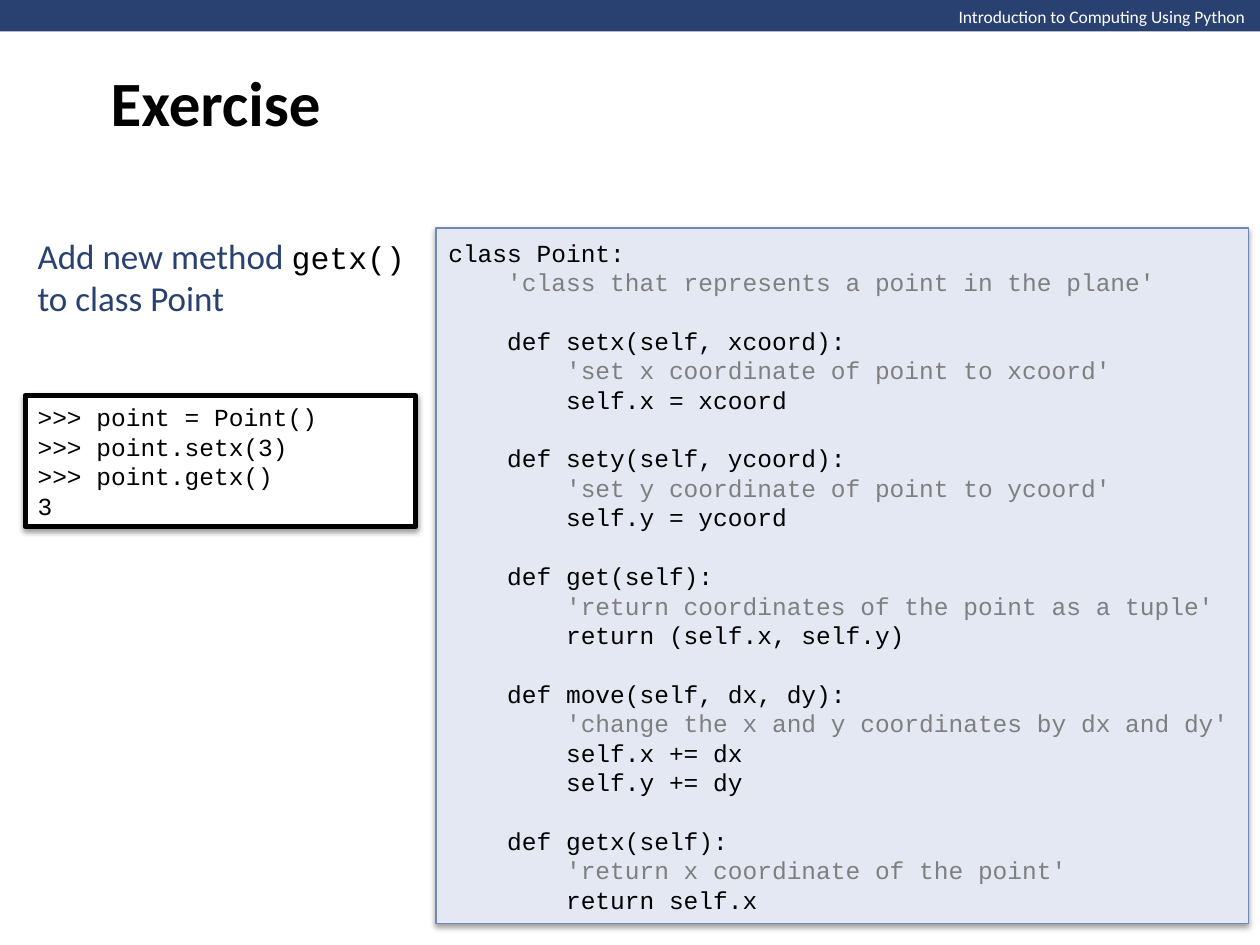
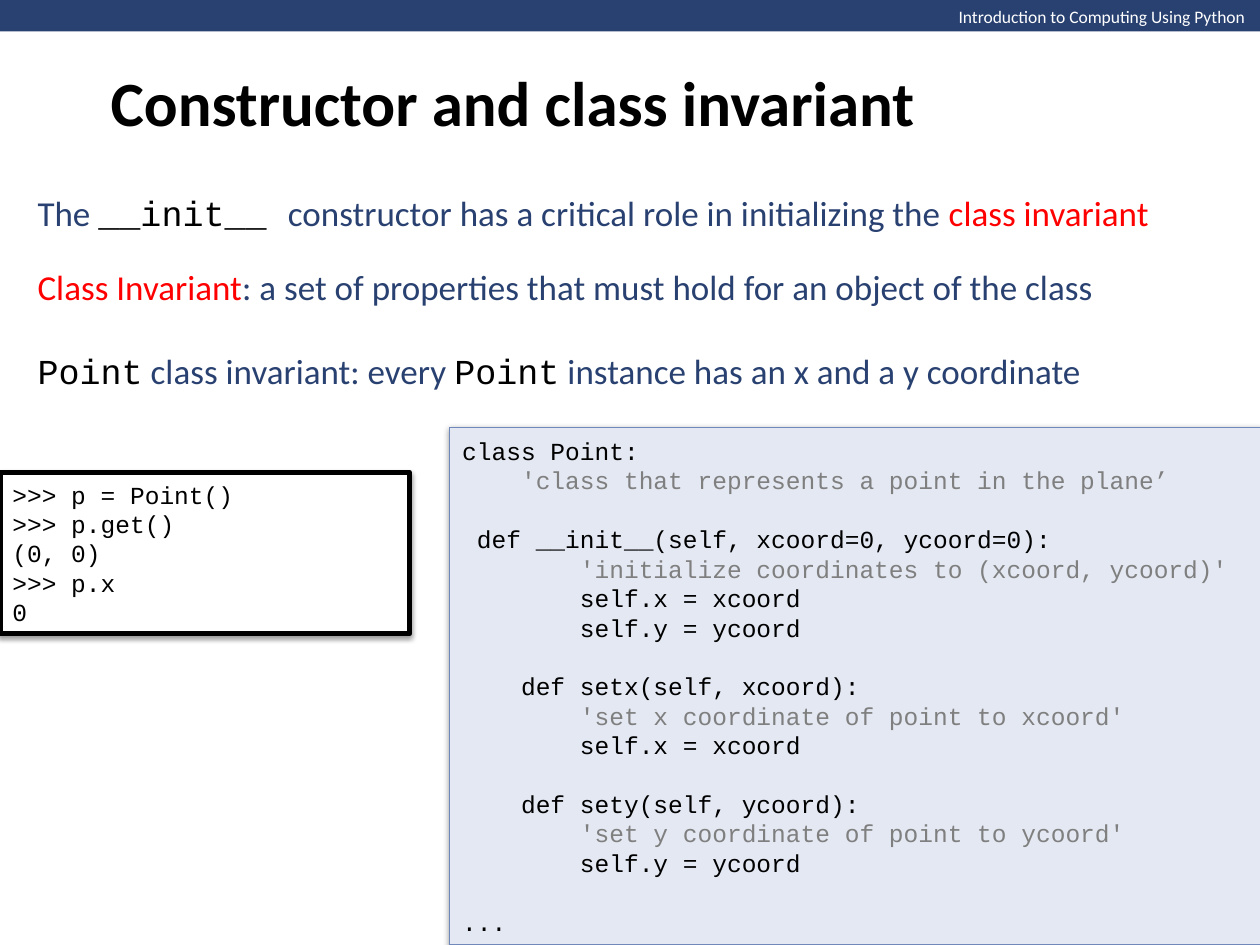
from lxml import etree
from pptx import Presentation
from pptx.dml.color import RGBColor
from pptx.enum.shapes import MSO_SHAPE
from pptx.enum.text import MSO_ANCHOR, PP_ALIGN
from pptx.oxml.ns import qn
from pptx.util import Inches, Pt

COLORS = {
    "navy": "294171",
    "white": "FFFFFF",
    "black": "000000",
    "red": "FF0000",
    "gray": "7F7F7F",
    "panel": "E3E8F2",
    "panel_line": "7088BA",
}
BODY_FONT = "Calibri"
CODE_FONT = "Courier New"
CODE_SIZE = 14
CODE_LINE = Pt(16.8)

SETTERS = """
    def setx(self, xcoord):
        'set x coordinate of point to xcoord'
        self.x = xcoord

    def sety(self, ycoord):
        'set y coordinate of point to ycoord'
        self.y = ycoord
"""

POINT_WITH_GETX = """class Point:
    'class that represents a point in the plane'
""" + SETTERS + """
    def get(self):
        'return coordinates of the point as a tuple'
        return (self.x, self.y)

    def move(self, dx, dy):
        'change the x and y coordinates by dx and dy'
        self.x += dx
        self.y += dy

    def getx(self):
        'return x coordinate of the point'
        return self.x"""

POINT_WITH_INIT = """class Point:
    'class that represents a point in the plane’

 def __init__(self, xcoord=0, ycoord=0):
        'initialize coordinates to (xcoord, ycoord)'
        self.x = xcoord
        self.y = ycoord
""" + SETTERS + """
..."""

GETX_SESSION = """>>> point = Point()
>>> point.setx(3)
>>> point.getx()
3"""

INIT_SESSION = """>>> p = Point()
>>> p.get()
(0, 0)
>>> p.x
0"""


def rgb(name):
    return RGBColor.from_string(COLORS[name])


def add_run(paragraph, text, size, color, font=BODY_FONT, bold=False):
    run = paragraph.add_run()
    run.text = text
    run.font.name = font
    run.font.size = Pt(size)
    run.font.bold = bold
    run.font.color.rgb = rgb(color)


def body(text, color="navy"):
    return text, 20, color, BODY_FONT


def code(text, size=20):
    return text, size, "black", CODE_FONT


def add_text(slide, left, top, width, height, runs, wrap=True, anchor=MSO_ANCHOR.MIDDLE):
    box = slide.shapes.add_textbox(Inches(left), Inches(top), Inches(width), Inches(height))
    frame = box.text_frame
    frame.word_wrap = wrap
    frame.vertical_anchor = anchor
    for run in runs:
        add_run(frame.paragraphs[0], *run)


def add_rectangle(slide, left, top, width, height, fill):
    shape = slide.shapes.add_shape(
        MSO_SHAPE.RECTANGLE, Inches(left), Inches(top), Inches(width), Inches(height))
    shape.shadow.inherit = False
    shape.fill.solid()
    shape.fill.fore_color.rgb = rgb(fill)
    shape.line.fill.background()
    return shape


def add_shadow(shape):
    effects = shape._element.spPr.find(qn("a:effectLst"))
    shadow = etree.SubElement(effects, qn("a:outerShdw"), blurRad=str(Pt(3.1)),
                              dist=str(Pt(1.6)), dir="5400000", rotWithShape="0")
    color = etree.SubElement(shadow, qn("a:srgbClr"), val=COLORS["black"])
    etree.SubElement(color, qn("a:alpha"), val="38000")


def add_code_box(slide, left, top, width, height, source, fill, line, line_width):
    shape = add_rectangle(slide, left, top, width, height, fill)
    shape.line.color.rgb = rgb(line)
    shape.line.width = Pt(line_width)
    add_shadow(shape)
    frame = shape.text_frame
    frame.word_wrap = True
    frame.vertical_anchor = MSO_ANCHOR.MIDDLE
    paragraph = None
    after_gap = False
    for text in source.split("\n"):
        if not text:
            after_gap = True
            continue
        paragraph = frame.add_paragraph() if paragraph else frame.paragraphs[0]
        paragraph.alignment = PP_ALIGN.LEFT
        paragraph.line_spacing = CODE_LINE
        if after_gap:
            paragraph.space_before = CODE_LINE
        after_gap = False
        color = "gray" if text.lstrip().startswith("'") else "black"
        add_run(paragraph, text, CODE_SIZE, color, CODE_FONT)


def add_class_panel(slide, left, top, height, source):
    add_code_box(slide, left, top, 6.45, height, source, "panel", "panel_line", 0.75)


def add_session(slide, left, top, width, height, source):
    add_code_box(slide, left, top, width, height, source, "white", "black", 3)


def add_titled_slide(presentation, title):
    slide = presentation.slides.add_slide(presentation.slide_layouts[6])
    add_rectangle(slide, 0, 0, 10.01, 0.25, "navy")
    add_text(slide, 7.51, 0, 2.5, 0.27,
             [("Introduction to Computing Using Python", 10, "white")],
             wrap=False, anchor=MSO_ANCHOR.TOP)
    add_text(slide, 0.78, 0, 8.72, 1.61, [(title, 36, "black", BODY_FONT, True)])
    return slide


def build_exercise(presentation):
    slide = add_titled_slide(presentation, "Exercise")
    add_text(slide, 0.2, 1.81, 3.26, 0.77,
             [body("Add new method "), code("getx()", 18), body(" to class Point")])
    add_session(slide, 0.2, 3.14, 3.1, 1.04, GETX_SESSION)
    add_class_panel(slide, 3.46, 1.81, 5.52, POINT_WITH_GETX)


def build_invariant(presentation):
    slide = add_titled_slide(presentation, "Constructor and class invariant")
    add_session(slide, 0, 3.75, 3.25, 1.28, INIT_SESSION)
    statements = [
        (1.47, [body("The "), code("__init__ "),
                body("constructor has a critical role in initializing the "),
                body("class invariant", "red")]),
        (2.05, [body("Class Invariant", "red"),
                body(": a set of properties that must hold for an object of the class")]),
        (2.72, [code("Point"), body(" class invariant: every "), code("Point"),
                body(" instance has an x and a y coordinate")]),
    ]
    for top, runs in statements:
        add_text(slide, 0.2, top, 9.8, 0.44, runs)
    add_class_panel(slide, 3.57, 3.39, 4.11, POINT_WITH_INIT)


def main():
    presentation = Presentation()
    presentation.slide_width = Inches(10)
    presentation.slide_height = Inches(7.5)
    build_exercise(presentation)
    build_invariant(presentation)
    presentation.save("out.pptx")


if __name__ == "__main__":
    main()
